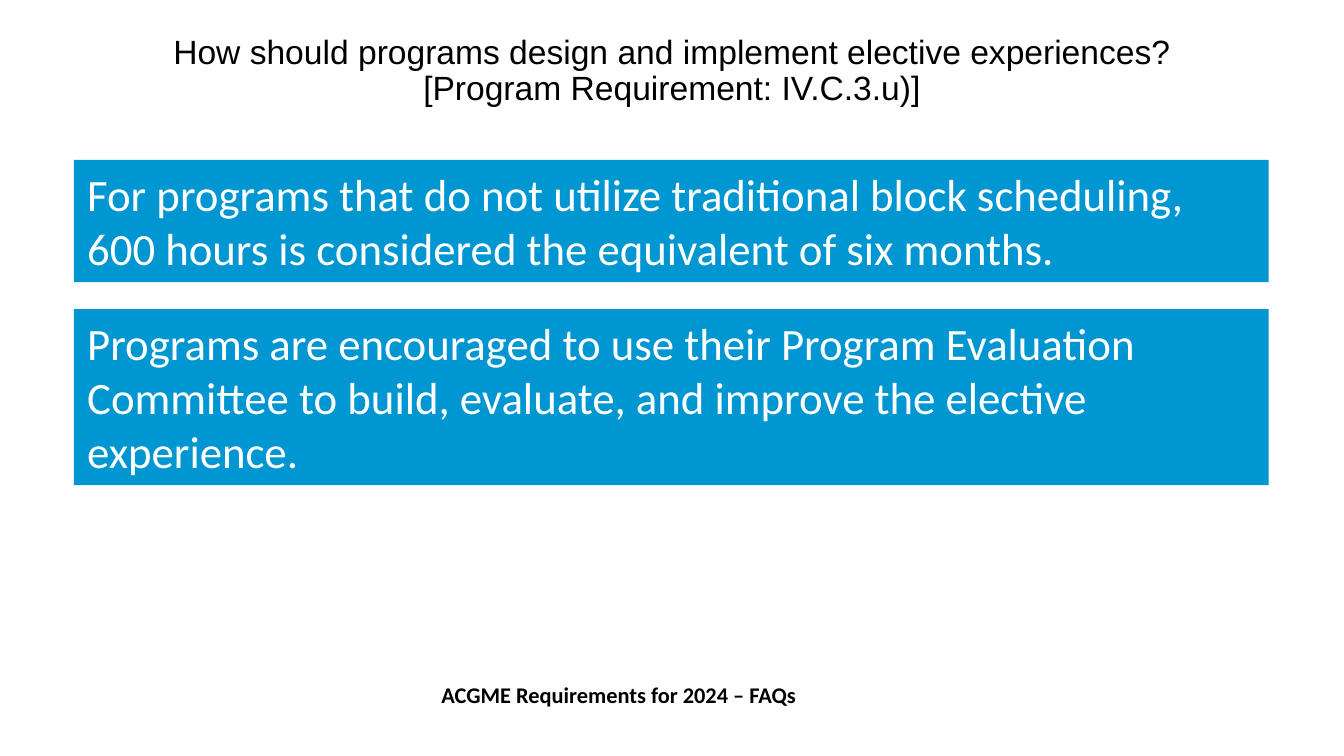
from pptx import Presentation
from pptx.dml.color import RGBColor
from pptx.enum.shapes import MSO_SHAPE as SHAPE
from pptx.enum.text import MSO_ANCHOR as ANCHOR, PP_ALIGN as ALIGN
from pptx.util import Inches, Pt

BLACK = RGBColor(0x00, 0x00, 0x00)
WHITE = RGBColor(0xFF, 0xFF, 0xFF)
BLUE = RGBColor(0x00, 0x96, 0xD2)


def write(sp, lines, size, font, color, align, anchor=ANCHOR.TOP, bold=False):
    """Fill a shape with one paragraph, with line breaks between the lines."""
    tf = sp.text_frame
    tf.word_wrap = True
    tf.vertical_anchor = anchor
    p = tf.paragraphs[0]
    p.alignment = align
    for i, line in enumerate(lines):
        if i:
            p.add_line_break()
        r = p.add_run()
        r.text = line
        r.font.size = Pt(size)
        r.font.name = font
        r.font.bold = bold
        r.font.color.rgb = color
    return p


prs = Presentation()
prs.slide_width = Inches(10)
prs.slide_height = Inches(10 * 9 / 16)  # 16:9
s = prs.slides.add_slide(prs.slide_layouts[6])

# Title
title = s.shapes.add_textbox(Inches(1.13), Inches(0.03), Inches(7.74), Inches(1.01))
p = write(title, ["How should programs design and implement elective experiences?",
                  "[Program Requirement: IV.C.3.u)]"],
          18, "Arial", BLACK, ALIGN.CENTER, ANCHOR.MIDDLE)
p.line_spacing = 0.9

# Answer panels
answers = [
    (1.19, 0.91, "For programs that do not utilize traditional block scheduling, "
                 "600 hours is considered the equivalent of six months."),
    (2.3, 1.31, "Programs are encouraged to use their Program Evaluation Committee "
                "to build, evaluate, and improve the elective experience."),
]
for top, height, text in answers:
    sp = s.shapes.add_shape(SHAPE.RECTANGLE, Inches(0.55), Inches(top),
                            Inches(8.89), Inches(height))
    sp.shadow.inherit = False
    sp.fill.solid()
    sp.fill.fore_color.rgb = BLUE
    sp.line.fill.background()
    write(sp, [text], 24, "Calibri", WHITE, ALIGN.LEFT)

# Footer
footer = s.shapes.add_textbox(Inches(3.17), Inches(5.02), Inches(2.87), Inches(0.3))
write(footer, ["ACGME Requirements for 2024 – FAQs"], 12, "Calibri", BLACK,
      ALIGN.CENTER, bold=True)

prs.save("out.pptx")
